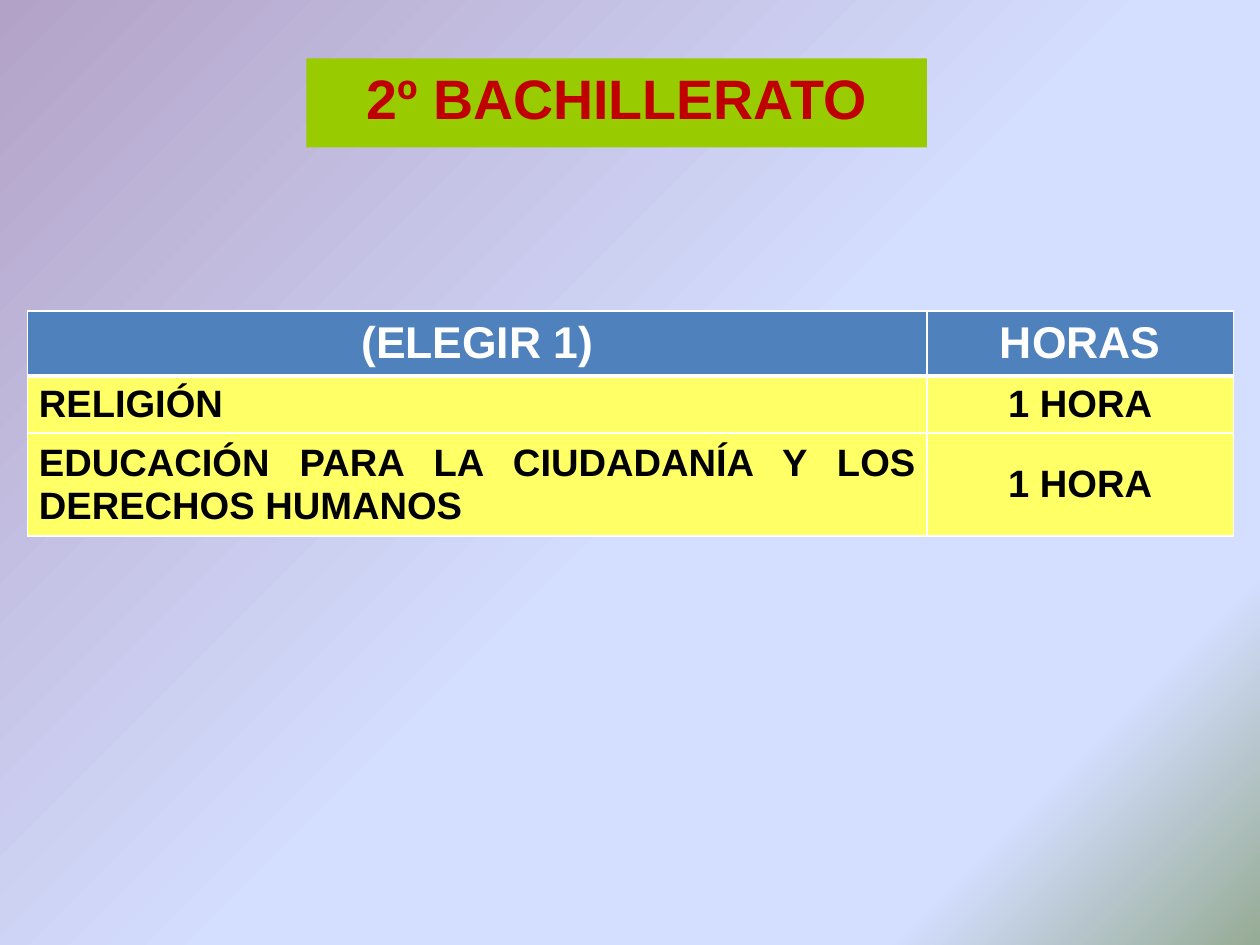
from lxml import etree
from pptx import Presentation
from pptx.dml.color import RGBColor
from pptx.enum.text import MSO_ANCHOR, PP_ALIGN
from pptx.oxml.ns import qn
from pptx.util import Inches, Pt

FONT = "Arial"
WHITE = RGBColor(0xFF, 0xFF, 0xFF)
BLACK = RGBColor(0x00, 0x00, 0x00)
RED = RGBColor(0xC0, 0x00, 0x00)
GREEN = RGBColor(0x99, 0xCC, 0x00)
BLUE = RGBColor(0x4F, 0x81, 0xBD)
YELLOW = RGBColor(0xFF, 0xFF, 0x66)
LILAC = RGBColor(0xB3, 0xA2, 0xC7)
PALE_BLUE = RGBColor(0xD4, 0xDE, 0xFF)
SAGE = RGBColor(0x96, 0xAB, 0x94)
CENTER, JUSTIFY = PP_ALIGN.CENTER, PP_ALIGN.JUSTIFY
MIDDLE = MSO_ANCHOR.MIDDLE

CM_PER_INCH = 2.54
BACKGROUND_STOPS = [(0, LILAC), (53, PALE_BLUE), (83, PALE_BLUE), (100, SAGE)]
HEADER_BORDERS = {"L": 1, "R": 1, "T": 1, "B": 3}
COLUMN_WIDTHS = [7.87, 2.68]
ROW_HEIGHTS = [0.57, 0.5, 0.9]
SUBJECT_ROWS = [
    ("(ELEGIR 1)", "HORAS"),
    ("RELIGIÓN", "1 HORA"),
    ("EDUCACIÓN PARA LA CIUDADANÍA Y LOS DERECHOS HUMANOS", "1 HORA"),
]


def write_text(frame, text, size=24, color=BLACK, align=CENTER):
    """Write one bold paragraph into a text frame."""
    paragraph = frame.paragraphs[0]
    paragraph.alignment = align
    run = paragraph.add_run()
    run.text = text
    run.font.name = FONT
    run.font.size = Pt(size)
    run.font.bold = True
    run.font.color.rgb = color


def add_color(parent, color):
    """Append an RGB colour element."""
    etree.SubElement(parent, qn("a:srgbClr"), val=str(color))


class SubjectSlide:
    """Holds the slide and draws its elements."""

    def __init__(self, presentation):
        """Add a slide with a title placeholder."""
        self.slide = presentation.slides.add_slide(presentation.slide_layouts[5])

    def background(self, stops, angle):
        """Fill the background with a linear gradient."""
        fill = self.slide.background.fill
        fill.gradient()
        fill.gradient_angle = 360 - angle
        stop_list = self.slide.element.find(".//" + qn("a:gsLst"))
        stop_list.clear()
        for position, color in stops:
            stop = etree.SubElement(stop_list, qn("a:gs"), pos=str(position * 1000))
            add_color(stop, color)

    def title(self, text, left, top, width, height):
        """Place and format the title."""
        shape = self.slide.shapes.title
        shape.left, shape.top = Inches(left), Inches(top)
        shape.width, shape.height = Inches(width), Inches(height)
        shape.fill.solid()
        shape.fill.fore_color.rgb = GREEN
        frame = shape.text_frame
        frame.vertical_anchor = MIDDLE
        frame.margin_top, frame.margin_bottom = Inches(0.05), Inches(0.14)
        write_text(frame, text, size=35, color=RED)

    def borders(self, cell, widths):
        """Draw white cell borders, with widths in points by side."""
        properties = cell._tc.get_or_add_tcPr()
        for index, (side, width) in enumerate(widths.items()):
            line = etree.Element(qn("a:ln" + side), w=str(Pt(width)))
            add_color(etree.SubElement(line, qn("a:solidFill")), WHITE)
            properties.insert(index, line)

    def table(self, rows, left, top):
        """Draw the table of subjects and hours."""
        table = self.slide.shapes.add_table(
            len(rows), len(COLUMN_WIDTHS), Inches(left), Inches(top),
            Inches(sum(COLUMN_WIDTHS)), Inches(sum(ROW_HEIGHTS))).table
        for column, width in zip(table.columns, COLUMN_WIDTHS):
            column.width = Inches(width)
        for row, height in zip(table.rows, ROW_HEIGHTS):
            row.height = Inches(height)
        for row_index, texts in enumerate(rows):
            header = row_index == 0
            for column_index, text in enumerate(texts):
                cell = table.cell(row_index, column_index)
                cell.vertical_anchor = MIDDLE
                cell.fill.solid()
                cell.fill.fore_color.rgb = BLUE if header else YELLOW
                if header:
                    self.borders(cell, HEADER_BORDERS)
                    write_text(cell.text_frame, text, size=28, color=WHITE)
                else:
                    align = CENTER if column_index else JUSTIFY
                    write_text(cell.text_frame, text, align=align)


def main():
    """Build and save the presentation."""
    presentation = Presentation()
    presentation.slide_width = Inches(28 / CM_PER_INCH)
    presentation.slide_height = Inches(21 / CM_PER_INCH)
    subjects = SubjectSlide(presentation)
    subjects.background(BACKGROUND_STOPS, angle=45)
    subjects.table(SUBJECT_ROWS, 0.24, 2.72)
    subjects.title("2º BACHILLERATO", 2.68, 0.51, 5.43, 0.78)
    presentation.save("out.pptx")


if __name__ == "__main__":
    main()
